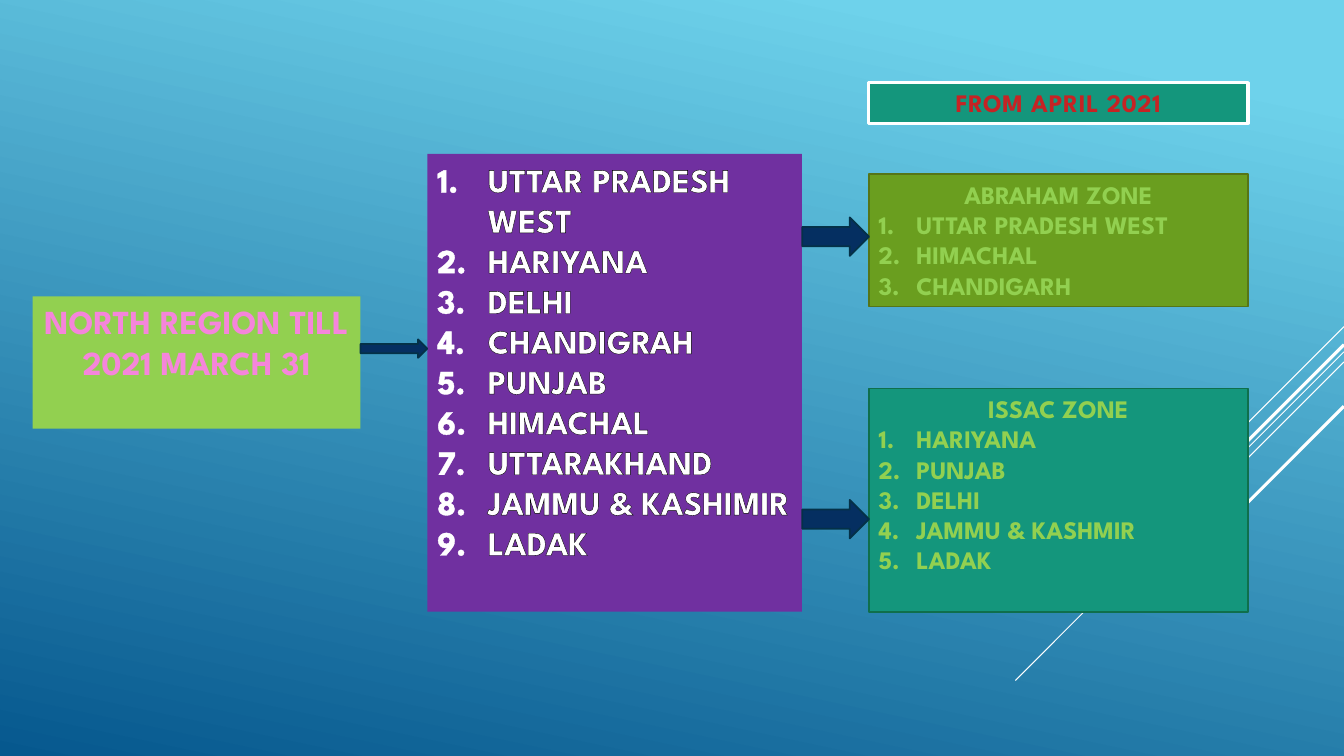
"""Build the slide that shows how the north region was split into two zones."""
from lxml import etree
from pptx import Presentation
from pptx.dml.color import RGBColor
from pptx.enum.shapes import MSO_CONNECTOR, MSO_SHAPE
from pptx.enum.text import MSO_ANCHOR, PP_ALIGN
from pptx.oxml.ns import qn
from pptx.util import Pt

RECTANGLE, ARROW = MSO_SHAPE.RECTANGLE, MSO_SHAPE.RIGHT_ARROW
STRAIGHT = MSO_CONNECTOR.STRAIGHT
TOP, CENTER, LEFT = MSO_ANCHOR.TOP, PP_ALIGN.CENTER, PP_ALIGN.LEFT
FONT = "League Spartan"

SKY = RGBColor(0x6E, 0xD2, 0xEB)
OCEAN = RGBColor(0x06, 0x58, 0x8E)
WHITE = RGBColor(0xFF, 0xFF, 0xFF)
BLACK = RGBColor(0x00, 0x00, 0x00)
LIME = RGBColor(0x92, 0xD0, 0x50)
PINK = RGBColor(0xF5, 0x85, 0xDB)
MAGENTA = RGBColor(0xA5, 0x0E, 0x82)
PURPLE = RGBColor(0x70, 0x30, 0xA0)
OLIVE = RGBColor(0x6A, 0x9E, 0x1F)
DARK_OLIVE = RGBColor(0x56, 0x75, 0x17)
TEAL = RGBColor(0x14, 0x96, 0x7C)
DARK_TEAL = RGBColor(0x0F, 0x6F, 0x4C)
RED = RGBColor(0xC6, 0x23, 0x24)
NAVY = RGBColor(0x05, 0x2F, 0x61)
DARK_NAVY = RGBColor(0x04, 0x31, 0x48)


def add_block(kind, place, fill, line=None, line_width=1.25):
    shape = slide.shapes.add_shape(kind, *[Pt(length) for length in place])
    shape.shadow.inherit = False
    shape.fill.solid()
    shape.fill.fore_color.rgb = fill
    if line is None:
        shape.line.fill.background()
    else:
        shape.line.color.rgb = line
        shape.line.width = Pt(line_width)
    return shape


def write(box, heading="", items=(), size=18, color=LIME, outline=BLACK,
          outline_width=0.75, indent=27, spacing=0):
    frame = box.text_frame
    frame.word_wrap = True
    frame.vertical_anchor = TOP
    lines = ([(heading, False)] if heading else []) + [(item, True) for item in items]
    for index, (text, numbered) in enumerate(lines):
        para = frame.add_paragraph() if index else frame.paragraphs[0]
        para.alignment = LEFT if numbered else CENTER
        if numbered:
            properties = para._p.get_or_add_pPr()
            properties.set("marL", str(Pt(indent)))
            properties.set("indent", str(-Pt(indent)))
            etree.SubElement(properties, qn("a:buFont"), typeface="+mj-lt")
            etree.SubElement(properties, qn("a:buAutoNum"), type="arabicPeriod")
        span = para.add_run()
        span.text = text
        span.font.name = FONT
        span.font.size = Pt(size)
        span.font.bold = True
        span.font.color.rgb = color
        run_properties = span._r.get_or_add_rPr()
        if spacing:
            run_properties.set("spc", str(int(spacing * 100)))
        edge = etree.Element(qn("a:ln"), w=str(Pt(outline_width)))
        edge_fill = etree.SubElement(edge, qn("a:solidFill"))
        etree.SubElement(edge_fill, qn("a:srgbClr"), val=str(outline))
        run_properties.insert(0, edge)


deck = Presentation()
deck.slide_width, deck.slide_height = Pt(960), Pt(540)
slide = deck.slides.add_slide(deck.slide_layouts[6])

background = slide.background.fill
background.gradient()
background.gradient_angle = 258
for stop, position, color in zip(background.gradient_stops, (0.1, 1), (SKY, OCEAN)):
    stop.position = position
    stop.color.rgb = color

for start_y, run_length, width in [
    (233.3, 72, 0.75),
    (251.3, 234.7, 0.75),
    (258.5, 149.4, 0.75),
    (246.2, 137.5, 2.25),
    (290.2, 100.1, 2.25),
]:
    stripe = slide.shapes.add_connector(
        STRAIGHT, Pt(960), Pt(start_y), Pt(960 - run_length), Pt(start_y + run_length))
    stripe.line.color.rgb = WHITE
    stripe.line.width = Pt(width)
    etree.SubElement(stripe._element.spPr, qn("a:effectLst"))

region_box = add_block(RECTANGLE, (23.3, 211.7, 234.2, 94.5), LIME)
write(region_box, "NORTH REGION TILL 2021 MARCH 31", size=24, color=PINK,
      outline=MAGENTA, outline_width=1.75)

states_box = add_block(RECTANGLE, (305.3, 110, 267.5, 326.9), PURPLE)
write(states_box, items=[
    "UTTAR PRADESH WEST", "HARIYANA", "DELHI", "CHANDIGRAH", "PUNJAB",
    "HIMACHAL", "UTTARAKHAND", "JAMMU & KASHIMIR", "LADAK",
], size=24, color=WHITE, outline_width=1.06, indent=36)

ZONE_LEFT, ZONE_WIDTH = 620.5, 271
abraham_box = add_block(RECTANGLE, (ZONE_LEFT, 124.4, ZONE_WIDTH, 94.5), OLIVE, DARK_OLIVE)
write(abraham_box, "ABRAHAM ZONE", ["UTTAR PRADESH WEST", "HIMACHAL", "CHANDIGARH"])

issac_box = add_block(RECTANGLE, (ZONE_LEFT, 277.5, ZONE_WIDTH, 159.8), TEAL, DARK_TEAL)
write(issac_box, "ISSAC ZONE",
      ["HARIYANA", "PUNJAB", "DELHI", "JAMMU & KASHMIR", "LADAK"])

date_box = add_block(RECTANGLE, (ZONE_LEFT, 59, ZONE_WIDTH, 29.1), TEAL, WHITE, 2.25)
write(date_box, "FROM APRIL 2021", color=RED, outline=NAVY, spacing=0.5)

for left, top, height in [(257.5, 242.4, 13.2), (573, 155.3, 27.5), (573, 357.1, 27.5)]:
    add_block(ARROW, (left, top, 47.7, height), NAVY, DARK_NAVY)

deck.save("out.pptx")
